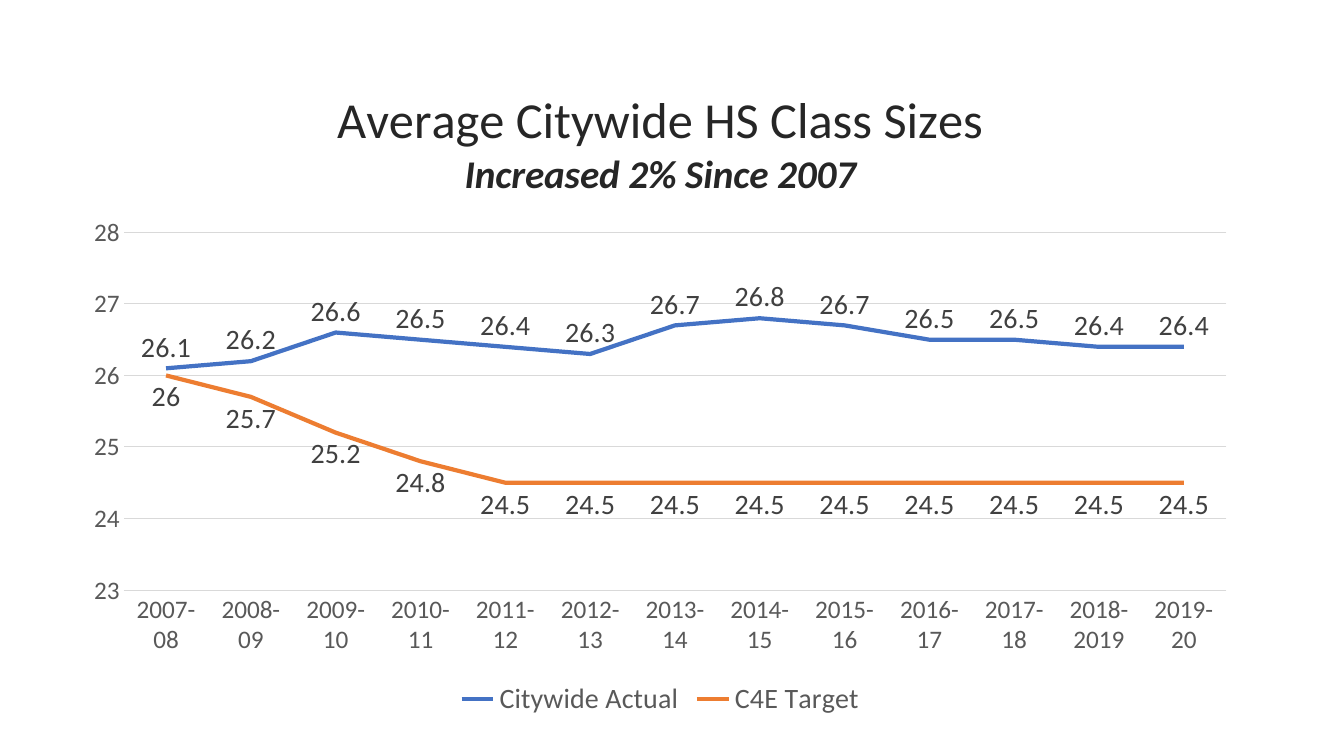
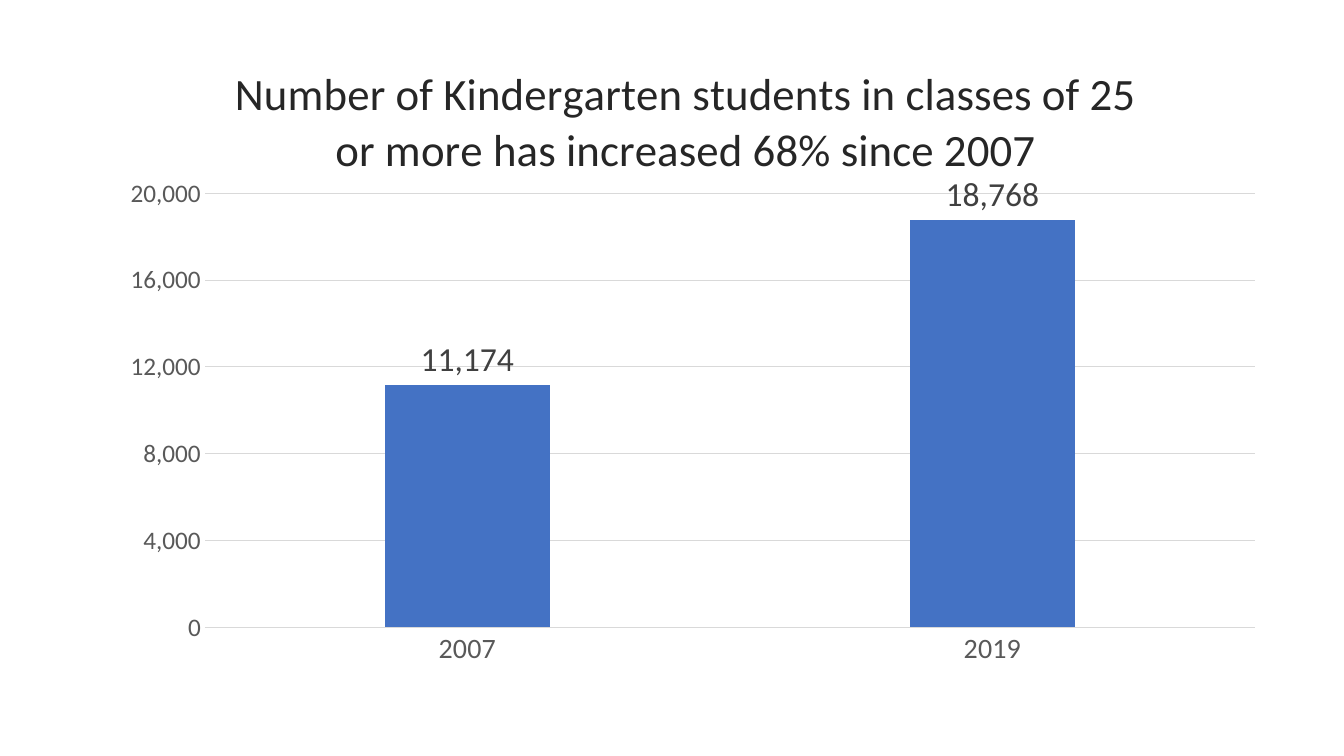
from dataclasses import dataclass
from typing import Optional

from lxml.etree import SubElement as SubEl
from pptx import Presentation
from pptx.chart.chart import Chart
from pptx.chart.data import CategoryChartData as ChartData
from pptx.dml.color import RGBColor
from pptx.enum.chart import XL_CHART_TYPE as Kind
from pptx.enum.chart import XL_LABEL_POSITION as Place
from pptx.enum.chart import XL_LEGEND_POSITION as Side
from pptx.enum.chart import XL_MARKER_STYLE as Mark
from pptx.enum.chart import XL_TICK_MARK as Tick
from pptx.oxml.ns import qn
from pptx.slide import Slide
from pptx.text.text import Font
from pptx.util import Cm, Pt

FACE = "Calibri"
BLUE = RGBColor(0x44, 0x72, 0xC4)
ORANGE = RGBColor(0xED, 0x7D, 0x31)
DARK = RGBColor(0x26, 0x26, 0x26)
INK = RGBColor(0x40, 0x40, 0x40)
GREY = RGBColor(0x59, 0x59, 0x59)
RULE = RGBColor(0xD9, 0xD9, 0xD9)


@dataclass
class Line:
    text: str
    size: int
    strong: bool = False


@dataclass
class Row:
    name: str
    vals: list[float]
    color: RGBColor
    place: Place


@dataclass
class Scale:
    low: float
    high: float
    step: float
    form: str


@dataclass
class Graph:
    kind: Kind
    box: tuple[float, float, float, float]
    plot: tuple[float, float, float, float]
    title: list[Line]
    cats: list[str]
    rows: list[Row]
    scale: Scale
    cat_size: int
    tag_size: int
    key_size: Optional[int] = None


GRAPHS = [
    Graph(
        kind=Kind.LINE,
        box=(1.78, 1.68, 29.72, 16.51),
        plot=(0.045, 0.253, 0.935, 0.546),
        title=[
            Line("Average Citywide HS Class Sizes", 36),
            Line("Increased 2% Since 2007", 28, True),
        ],
        cats=["2007-08", "2008-09", "2009-10", "2010-11", "2011-12",
              "2012-13", "2013-14", "2014-15", "2015-16", "2016-17",
              "2017-18", "2018-2019", "2019-20"],
        rows=[
            Row("Citywide Actual",
                [26.1, 26.2, 26.6, 26.5, 26.4, 26.3, 26.7, 26.8, 26.7,
                 26.5, 26.5, 26.4, 26.4], BLUE, Place.ABOVE),
            Row("C4E Target",
                [26, 25.7, 25.2, 24.8] + [24.5] * 9, ORANGE, Place.BELOW),
        ],
        scale=Scale(23, 28, 1, "General"),
        cat_size=18, tag_size=20, key_size=20,
    ),
    Graph(
        kind=Kind.COLUMN_CLUSTERED,
        box=(2.57, 0.91, 29.44, 16.43),
        plot=(0.088, 0.241, 0.899, 0.666),
        title=[Line("Number of Kindergarten students in classes of 25 "
                    "or more has increased 68% since 2007", 32)],
        cats=["2007", "2019"],
        rows=[Row("Students", [11174, 18768], BLUE, Place.OUTSIDE_END)],
        scale=Scale(0, 20000, 4000, "#,##0"),
        cat_size=20, tag_size=24,
    ),
]


def style(font: Font, size: int, color: RGBColor, strong: bool = False) -> None:
    font.name = FACE
    font.size = Pt(size)
    font.bold = font.italic = strong
    font.color.rgb = color


def set_title(chart: Chart, lines: list[Line]) -> None:
    chart.has_title = True
    chart.chart_title.include_in_layout = False
    frame = chart.chart_title.text_frame
    for i, line in enumerate(lines):
        para = frame.add_paragraph() if i else frame.paragraphs[0]
        para.text = line.text
        for run in para.runs:
            style(run.font, line.size, DARK, line.strong)


def set_plot(chart: Chart, plot: tuple[float, float, float, float]) -> None:
    area = chart._chartSpace.find(".//" + qn("c:plotArea"))
    for old in area.findall(qn("c:layout")):
        area.remove(old)
    lay = SubEl(area, qn("c:layout"))
    area.insert(0, lay)
    man = SubEl(lay, qn("c:manualLayout"))
    marks = [("layoutTarget", "inner"), ("xMode", "edge"), ("yMode", "edge")]
    for tag, val in marks + list(zip("xywh", plot)):
        SubEl(man, qn("c:" + tag)).set("val", str(val))


def set_axes(chart: Chart, graph: Graph) -> None:
    cat, val = chart.category_axis, chart.value_axis
    for axis, size in ((cat, graph.cat_size), (val, 18)):
        axis.major_tick_mark = axis.minor_tick_mark = Tick.NONE
        style(axis.tick_labels.font, size, GREY)
    val.has_major_gridlines = True
    for line in (cat.format.line, val.major_gridlines.format.line):
        line.color.rgb = RULE
        line.width = Pt(0.75)
    val.format.line.fill.background()
    val.minimum_scale = graph.scale.low
    val.maximum_scale = graph.scale.high
    val.major_unit = graph.scale.step
    val.tick_labels.number_format = graph.scale.form
    val.tick_labels.number_format_is_linked = False


def set_rows(chart: Chart, graph: Graph) -> None:
    plot = chart.plots[0]
    plot.vary_by_categories = False
    for item, row in zip(plot.series, graph.rows):
        if graph.kind == Kind.LINE:
            item.smooth = False
            item.marker.style = Mark.NONE
            item.format.line.color.rgb = row.color
            item.format.line.width = Pt(3)
        else:
            plot.gap_width = 219
            plot.overlap = -27
            item.format.fill.solid()
            item.format.fill.fore_color.rgb = row.color
        tags = item.data_labels
        tags.show_value = True
        tags.position = row.place
        tags.number_format = graph.scale.form
        tags.number_format_is_linked = False
        style(tags.font, graph.tag_size, INK)


def draw(slide: Slide, graph: Graph) -> None:
    data = ChartData()
    data.categories = graph.cats
    for row in graph.rows:
        data.add_series(row.name, row.vals)
    box = [Cm(n) for n in graph.box]
    chart = slide.shapes.add_chart(graph.kind, *box, data).chart
    chart.font.name = FACE
    chart.font.size = Pt(10)
    set_title(chart, graph.title)
    set_plot(chart, graph.plot)
    set_axes(chart, graph)
    set_rows(chart, graph)
    chart.has_legend = graph.key_size is not None
    if graph.key_size is not None:
        chart.legend.position = Side.BOTTOM
        chart.legend.include_in_layout = False
        style(chart.legend.font, graph.key_size, GREY)


def main() -> None:
    deck = Presentation()
    deck.slide_width, deck.slide_height = Cm(33.87), Cm(19.05)
    for graph in GRAPHS:
        draw(deck.slides.add_slide(deck.slide_layouts[6]), graph)
    deck.save("out.pptx")


if __name__ == "__main__":
    main()
